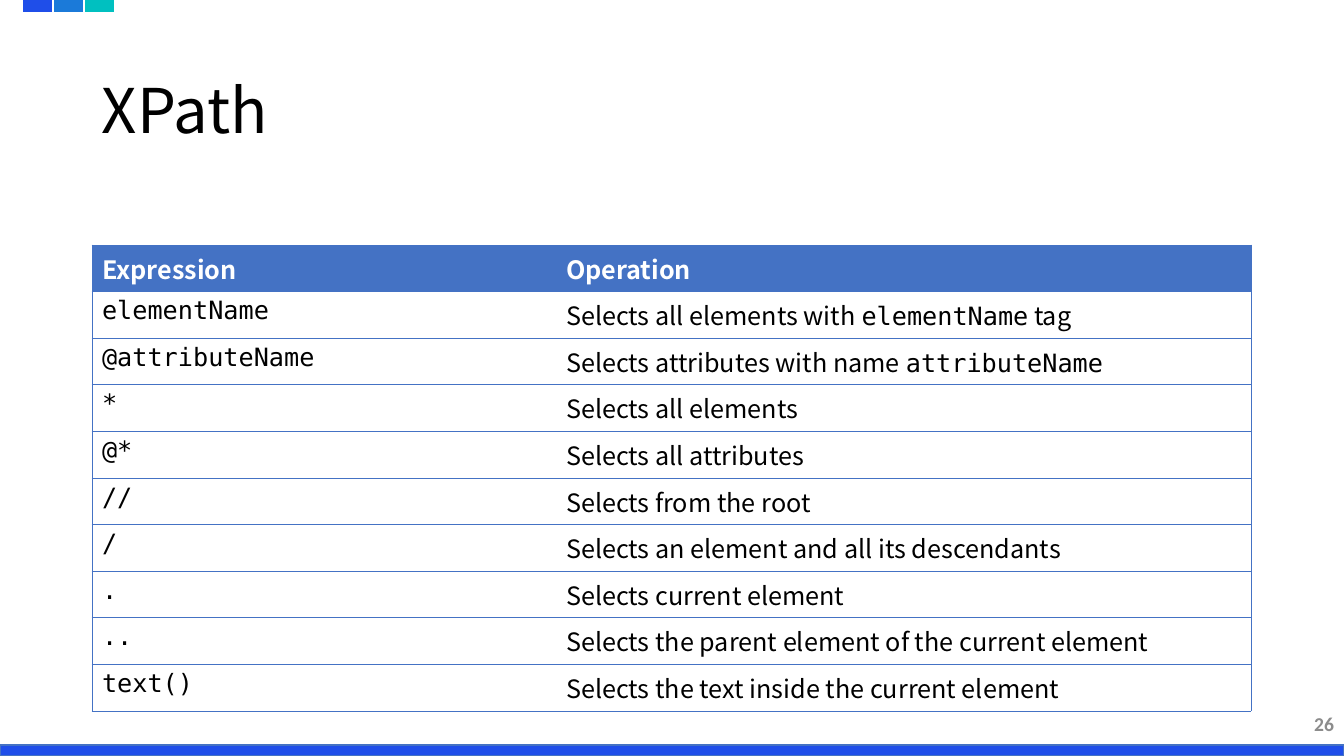
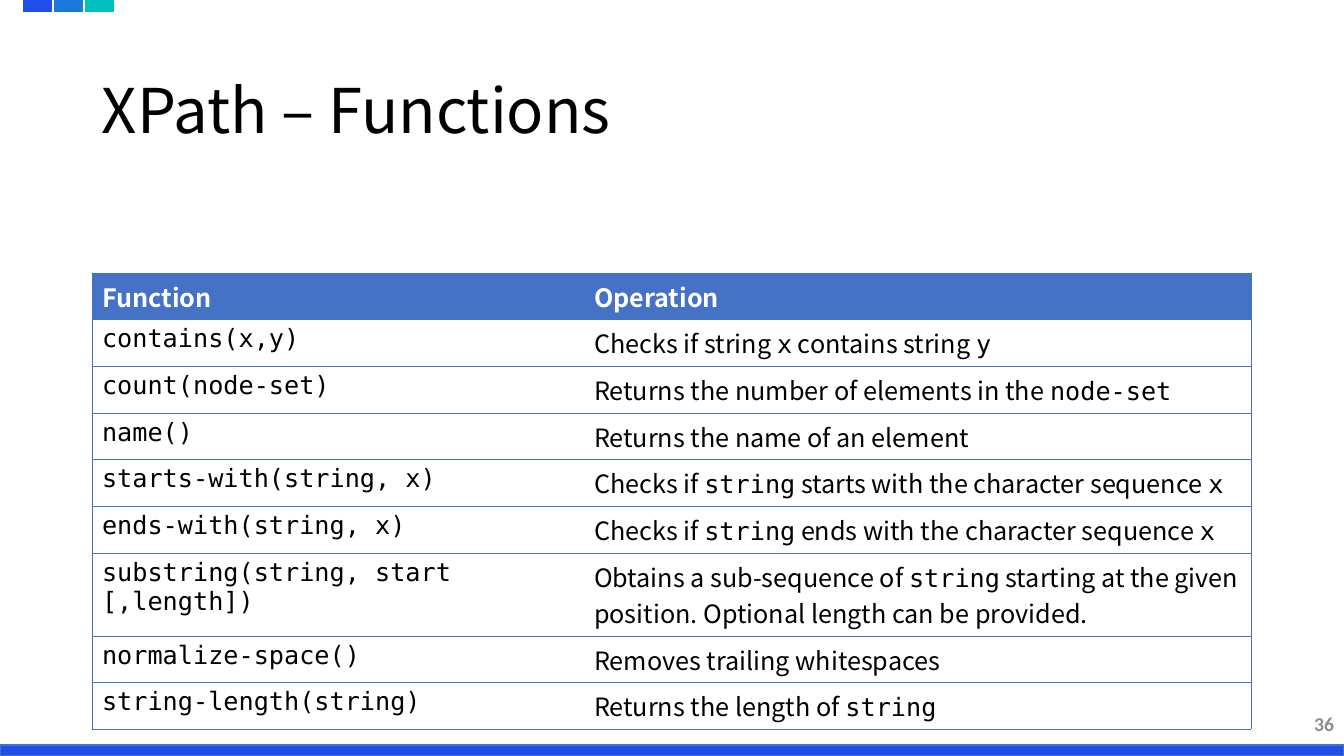
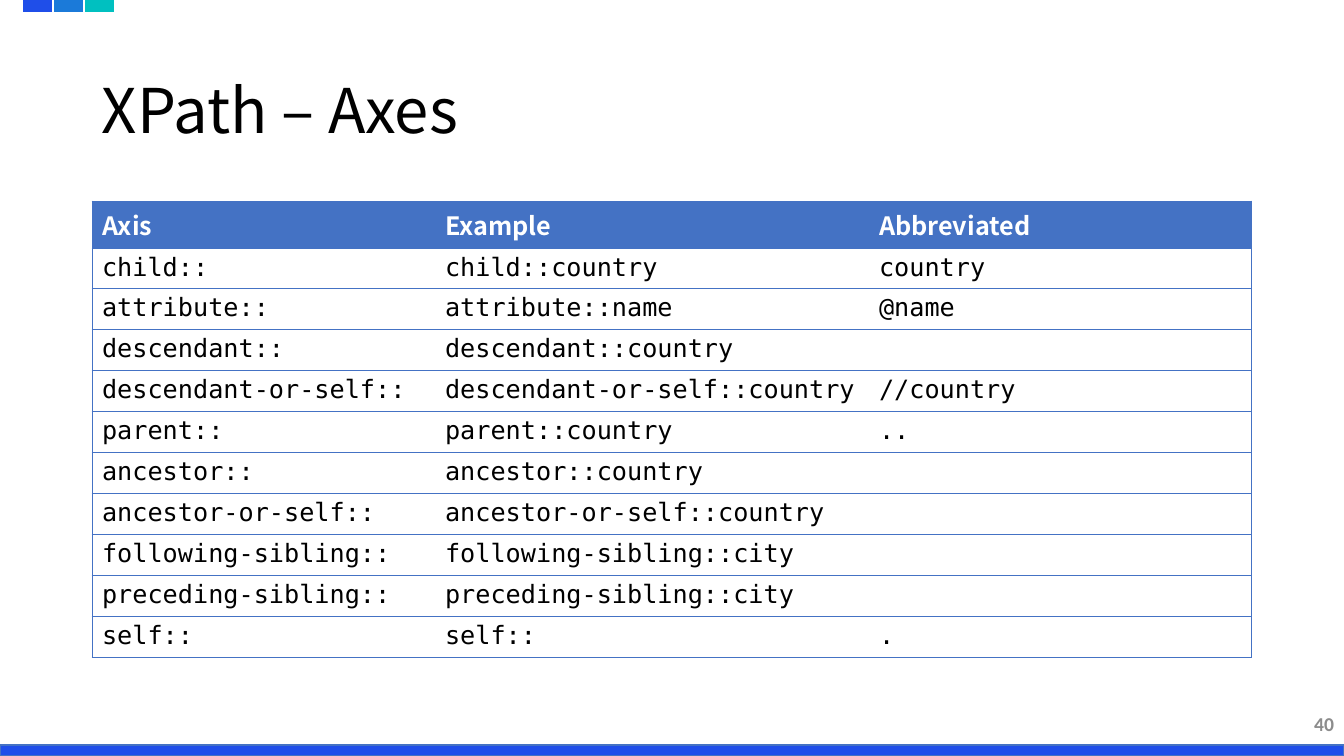
from dataclasses import dataclass

from lxml import etree
from pptx import Presentation
from pptx.dml.color import RGBColor
from pptx.enum.shapes import MSO_SHAPE
from pptx.enum.text import MSO_ANCHOR, PP_ALIGN
from pptx.oxml.ns import qn
from pptx.slide import Slide
from pptx.table import _Cell
from pptx.text.text import TextFrame
from pptx.util import Emu, Pt

RECTANGLE = MSO_SHAPE.RECTANGLE
MIDDLE = MSO_ANCHOR.MIDDLE
LEFT, RIGHT = PP_ALIGN.LEFT, PP_ALIGN.RIGHT

EMU_PER_PX = 914400 / 100.8
SLIDE_WIDTH, SLIDE_HEIGHT = 1344, 756
CONTENT_LEFT, CONTENT_WIDTH = 92, 1159
BAND_HEIGHT = 11
TAB_LEFT, TAB_WIDTH, TAB_PITCH = 24, 27, 31
BORDER_WIDTH = Pt(0.5)

SANS, MONO, NUMBER_FONT = "Noto Sans CJK KR", "DejaVu Sans Mono", "Calibri"
COLOURS = {
    "royal": "1F4EE9",
    "blue": "1B7AD9",
    "teal": "00C0C0",
    "table": "4472C4",
    "text": "000000",
    "header_text": "FFFFFF",
    "number": "8C8C8C",
}


@dataclass(frozen=True)
class Band:
    left: int
    top: int
    width: int
    fill: str
    line: str


@dataclass(frozen=True)
class TableSlide:
    title: str
    number: int
    top: int
    columns: tuple[int, ...]
    heights: tuple[int, ...]
    code_columns: int
    rows: tuple[tuple[str, ...], ...]


def split(total: int, count: int) -> tuple[int, ...]:
    edges = [total * index // count for index in range(count + 1)]
    return tuple(end - start for start, end in zip(edges, edges[1:]))


BANDS = [Band(0, SLIDE_HEIGHT - BAND_HEIGHT, SLIDE_WIDTH, "royal", "table")] + [
    Band(TAB_LEFT + index * TAB_PITCH, 0, TAB_WIDTH, colour, colour)
    for index, colour in enumerate(("royal", "blue", "teal"))
]

SLIDES = (
    TableSlide(
        "XPath", 26, 245, (464, 695), split(466, 10), 1,
        (
            ("Expression", "Operation"),
            ("elementName", "Selects all elements with `elementName` tag"),
            ("@attributeName", "Selects attributes with name `attributeName`"),
            ("*", "Selects all elements"),
            ("@*", "Selects all attributes"),
            ("//", "Selects from the root"),
            ("/", "Selects an element and all its descendants"),
            (".", "Selects current element"),
            ("..", "Selects the parent element of the current element"),
            ("text()", "Selects the text inside the current element"),
        ),
    ),
    TableSlide(
        "XPath – Functions", 36, 273, (492, 667), split(280, 6) + (83,) + split(93, 2), 1,
        (
            ("Function", "Operation"),
            ("contains(x,y)", "Checks if string `x` contains string `y`"),
            ("count(node-set)", "Returns the number of elements in the `node-set`"),
            ("name()", "Returns the name of an element"),
            ("starts-with(string, x)", "Checks if `string` starts with the character sequence `x`"),
            ("ends-with(string, x)", "Checks if `string` ends with the character sequence `x`"),
            (
                "substring(string, start [,length])",
                "Obtains a sub-sequence of `string` starting at the given position. "
                "Optional length can be provided.",
            ),
            ("normalize-space()", "Removes trailing whitespaces"),
            ("string-length(string)", "Returns the length of `string`"),
        ),
    ),
    TableSlide(
        "XPath – Axes", 40, 201, (343, 434, 382), (47,) + split(409, 10), 3,
        (
            ("Axis", "Example", "Abbreviated"),
            ("child::", "child::country", "country"),
            ("attribute::", "attribute::name", "@name"),
            ("descendant::", "descendant::country", ""),
            ("descendant-or-self::", "descendant-or-self::country", "//country"),
            ("parent::", "parent::country", ".."),
            ("ancestor::", "ancestor::country", ""),
            ("ancestor-or-self::", "ancestor-or-self::country", ""),
            ("following-sibling::", "following-sibling::city", ""),
            ("preceding-sibling::", "preceding-sibling::city", ""),
            ("self::", "self::", "."),
        ),
    ),
)


def px(length: int) -> Emu:
    return Emu(round(length * EMU_PER_PX))


def rgb(name: str) -> RGBColor:
    return RGBColor.from_string(COLOURS[name])


def write_text(
    frame: TextFrame,
    text: str,
    *,
    size: int = 18,
    font: str = SANS,
    colour: str = "text",
    bold: bool = False,
    align: PP_ALIGN = LEFT,
    line_spacing: float = 1.0,
) -> None:
    paragraph = frame.paragraphs[0]
    paragraph.alignment = align
    paragraph.line_spacing = line_spacing
    for index, part in enumerate(text.split("`")):
        if part:
            run = paragraph.add_run()
            run.text = part
            run.font.name = MONO if index % 2 else font
            run.font.size = Pt(size)
            run.font.bold = bold
            run.font.color.rgb = rgb(colour)


def add_text_box(slide: Slide, left: int, top: int, width: int, height: int) -> TextFrame:
    frame = slide.shapes.add_textbox(px(left), px(top), px(width), px(height)).text_frame
    frame.word_wrap = True
    frame.vertical_anchor = MIDDLE
    return frame


def add_band(slide: Slide, band: Band) -> None:
    shape = slide.shapes.add_shape(
        RECTANGLE, px(band.left), px(band.top), px(band.width), px(BAND_HEIGHT)
    )
    shape.shadow.inherit = False
    shape.fill.solid()
    shape.fill.fore_color.rgb = rgb(band.fill)
    shape.line.color.rgb = rgb(band.line)
    shape.line.width = Pt(1)
    outline = shape.element.spPr.find(qn("a:ln"))
    etree.SubElement(outline, qn("a:miter"), lim="800000")


def set_borders(cell: _Cell, visible: dict[str, bool]) -> None:
    properties = cell._tc.get_or_add_tcPr()
    for side, shown in visible.items():
        line = etree.SubElement(properties, qn(f"a:ln{side}"), w=str(BORDER_WIDTH))
        if shown:
            fill = etree.SubElement(line, qn("a:solidFill"))
            etree.SubElement(fill, qn("a:srgbClr"), val=COLOURS["table"])
        else:
            etree.SubElement(line, qn("a:noFill"))


def add_table(slide: Slide, content: TableSlide) -> None:
    table = slide.shapes.add_table(
        len(content.rows), len(content.columns),
        px(CONTENT_LEFT), px(content.top), px(CONTENT_WIDTH), px(sum(content.heights)),
    ).table
    table.first_row = False
    table.horz_banding = False
    for column, width in zip(table.columns, content.columns):
        column.width = px(width)
    for row, height in zip(table.rows, content.heights):
        row.height = px(height)
    last_column = len(content.columns) - 1
    for row_index, texts in enumerate(content.rows):
        for column_index, text in enumerate(texts):
            cell = table.cell(row_index, column_index)
            set_borders(
                cell,
                {"L": column_index == 0, "R": column_index == last_column, "T": True, "B": True},
            )
            if row_index == 0:
                cell.fill.solid()
                cell.fill.fore_color.rgb = rgb("table")
                write_text(cell.text_frame, text, colour="header_text", bold=True)
            else:
                cell.fill.background()
                font = MONO if column_index < content.code_columns else SANS
                write_text(cell.text_frame, text, font=font)


def add_table_slide(presentation: Presentation, content: TableSlide) -> None:
    slide = presentation.slides.add_slide(presentation.slide_layouts[6])
    for band in BANDS:
        add_band(slide, band)
    title = add_text_box(slide, CONTENT_LEFT, 41, CONTENT_WIDTH, 146)
    write_text(title, content.title, size=44, line_spacing=0.9)
    add_table(slide, content)
    number = add_text_box(slide, SLIDE_WIDTH - 302, 704, 302, 40)
    write_text(
        number, str(content.number),
        size=14, font=NUMBER_FONT, colour="number", bold=True, align=RIGHT,
    )


def main() -> None:
    presentation = Presentation()
    presentation.slide_width = px(SLIDE_WIDTH)
    presentation.slide_height = px(SLIDE_HEIGHT)
    for content in SLIDES:
        add_table_slide(presentation, content)
    presentation.save("out.pptx")


if __name__ == "__main__":
    main()
